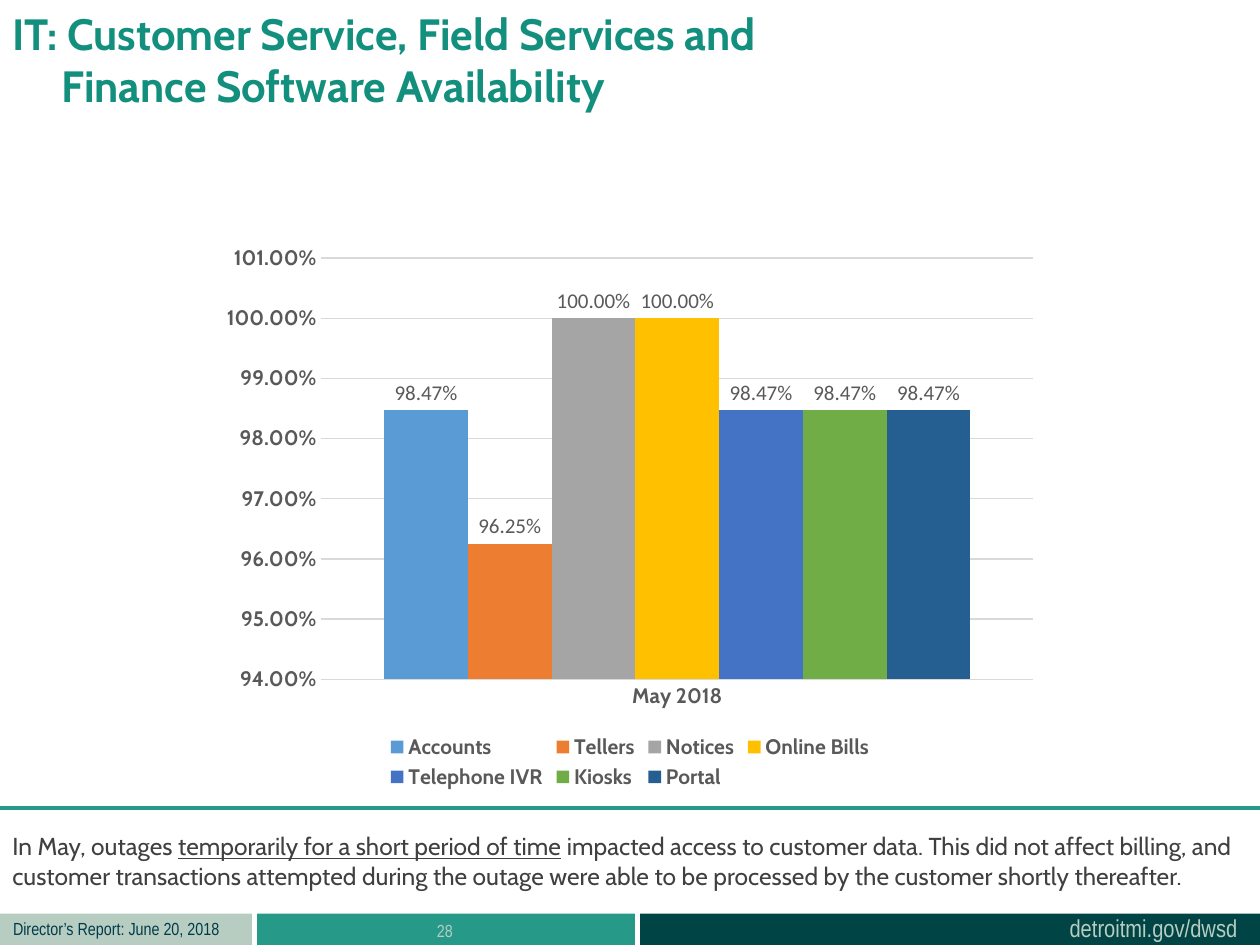
from dataclasses import dataclass

from lxml.etree import SubElement
from pptx import Presentation
from pptx.chart.data import CategoryChartData
from pptx.dml.color import RGBColor
from pptx.enum.chart import XL_CHART_TYPE, XL_LABEL_POSITION, XL_LEGEND_POSITION, XL_TICK_MARK
from pptx.enum.shapes import MSO_CONNECTOR, MSO_SHAPE
from pptx.enum.text import MSO_ANCHOR, MSO_AUTO_SIZE, PP_ALIGN
from pptx.oxml.ns import qn
from pptx.util import Pt


@dataclass(frozen=True)
class Theme:
    heading: str = "138F7E"
    teal: str = "279989"
    dark: str = "004445"
    pale: str = "B7CDC2"
    navy: str = "003B49"
    body: str = "404040"
    label: str = "595959"
    grid: str = "D9D9D9"
    main_font: str = "Cabin"
    value_font: str = "Calibri"
    footer_font: str = "Arial Narrow"
    title_size: int = 25
    body_size: int = 14
    chart_size: int = 12
    footer_size: int = 10


theme = Theme()


def style(font, name, size, color, bold=False):
    font.name, font.size, font.bold = name, Pt(size), bold
    font.color.rgb = RGBColor.from_string(color)


def add_text(box, texts, name, size, color, wrap=False, align=PP_ALIGN.LEFT):
    frame = slide.shapes.add_textbox(*map(Pt, box)).text_frame
    frame.word_wrap = wrap
    paragraph = frame.paragraphs[0]
    paragraph.alignment = align
    for text, underlined in texts:
        run = paragraph.add_run()
        run.text = text
        style(run.font, name, size, color)
        run.font.underline = underlined


prs = Presentation()
prs.slide_width, prs.slide_height = Pt(720), Pt(540)
slide = prs.slides.add_slide(prs.slide_layouts[5])

# Title, second line indented
title = slide.shapes.title
title.left, title.top, title.width, title.height = Pt(0), Pt(0), Pt(546.5), Pt(55.4)
heading = title.text_frame
heading.word_wrap = True
heading.auto_size = MSO_AUTO_SIZE.NONE
heading.vertical_anchor = MSO_ANCHOR.TOP
heading_line = heading.paragraphs[0]
heading_line.alignment = PP_ALIGN.LEFT
heading_props = heading_line._p.get_or_add_pPr()
heading_props.set("marL", str(Pt(28)))
heading_props.set("indent", str(-Pt(28)))
for position, text in enumerate(["IT: Customer Service, Field Services and",
                                 "Finance Software Availability"]):
    if position:
        heading_line.add_line_break()
    run = heading_line.add_run()
    run.text = text
    style(run.font, theme.main_font, theme.title_size, theme.heading, True)

# Footer bands
for left, width, color in [(146.9, 216, theme.teal), (365.8, 354.2, theme.dark),
                           (0, 144, theme.pale)]:
    band = slide.shapes.add_shape(MSO_SHAPE.RECTANGLE, Pt(left), Pt(522), Pt(width), Pt(18))
    band.shadow.inherit = False
    band.fill.solid()
    band.fill.fore_color.rgb = RGBColor.from_string(color)
    band.line.fill.background()

# Footer text
for box, text, size, color, align in [
    ((604.1, 518.4, 111.6, 24.5), "detroitmi.gov/dwsd", 14, theme.pale, PP_ALIGN.LEFT),
    ((0.4, 521.3, 132.5, 19.4), "Director’s Report: June 20, 2018",
     theme.footer_size, theme.navy, PP_ALIGN.LEFT),
    ((146.2, 522, 216, 28.8), "28", theme.footer_size, theme.pale, PP_ALIGN.CENTER),
]:
    add_text(box, [(text, False)], theme.footer_font, size, color, align=align)

# Availability chart
systems = [
    ("Accounts", 0.9847, "5B9BD5"),
    ("Tellers", 0.9625, "ED7D31"),
    ("Notices", 1, "A5A5A5"),
    ("Online Bills", 1, "FFC000"),
    ("Telephone IVR", 0.9847, "4472C4"),
    ("Kiosks", 0.9847, "70AD47"),
    ("Portal", 0.9847, "255E91"),
]
data = CategoryChartData(number_format="0.00%")
data.categories = ["May 2018"]
for name, availability, _ in systems:
    data.add_series(name, [availability])
chart = slide.shapes.add_chart(XL_CHART_TYPE.COLUMN_CLUSTERED, Pt(120), Pt(134),
                               Pt(480), Pt(320), data).chart
chart.has_title = False
style(chart.font, theme.value_font, 10, "000000")

bars = chart.plots[0]
bars.gap_width, bars.overlap = 150, 0
bars.vary_by_categories = False
for series, (_, _, color) in zip(bars.series, systems):
    series.format.fill.solid()
    series.format.fill.fore_color.rgb = RGBColor.from_string(color)
    labels = series.data_labels
    labels.show_value = True
    labels.number_format, labels.number_format_is_linked = "0.00%", False
    labels.position = XL_LABEL_POSITION.OUTSIDE_END
    style(labels.font, theme.value_font, theme.chart_size, theme.label)

for axis in (chart.category_axis, chart.value_axis):
    axis.major_tick_mark = axis.minor_tick_mark = XL_TICK_MARK.NONE
    axis.format.line.fill.background()
    style(axis.tick_labels.font, theme.main_font, theme.chart_size, theme.label, True)
percent = chart.value_axis
percent.minimum_scale, percent.maximum_scale, percent.major_unit = 0.94, 1.01, 0.01
percent.tick_labels.number_format = "0.00%"
percent.tick_labels.number_format_is_linked = False
percent.has_major_gridlines = True
percent.major_gridlines.format.line.color.rgb = RGBColor.from_string(theme.grid)
percent.major_gridlines.format.line.width = Pt(0.75)

chart.has_legend = True
chart.legend.position = XL_LEGEND_POSITION.BOTTOM
chart.legend.include_in_layout = False
style(chart.legend.font, theme.main_font, theme.chart_size, theme.label, True)

# Outage note under a rule
add_text((0, 471.6, 720, 41), [
    ("In May, outages ", False),
    ("temporarily for a short period of time", True),
    (" impacted access to customer data. This did not affect billing, and customer "
     "transactions attempted during the outage were able to be processed by the "
     "customer shortly thereafter.", False),
], theme.main_font, theme.body_size, theme.body, wrap=True)
rule = slide.shapes.add_connector(MSO_CONNECTOR.STRAIGHT, Pt(720), Pt(461.5), Pt(0), Pt(461.5))
rule.line.color.rgb = RGBColor.from_string(theme.teal)
rule.line.width = Pt(2.25)
SubElement(rule._element.spPr, qn("a:effectLst"))

prs.save("out.pptx")
